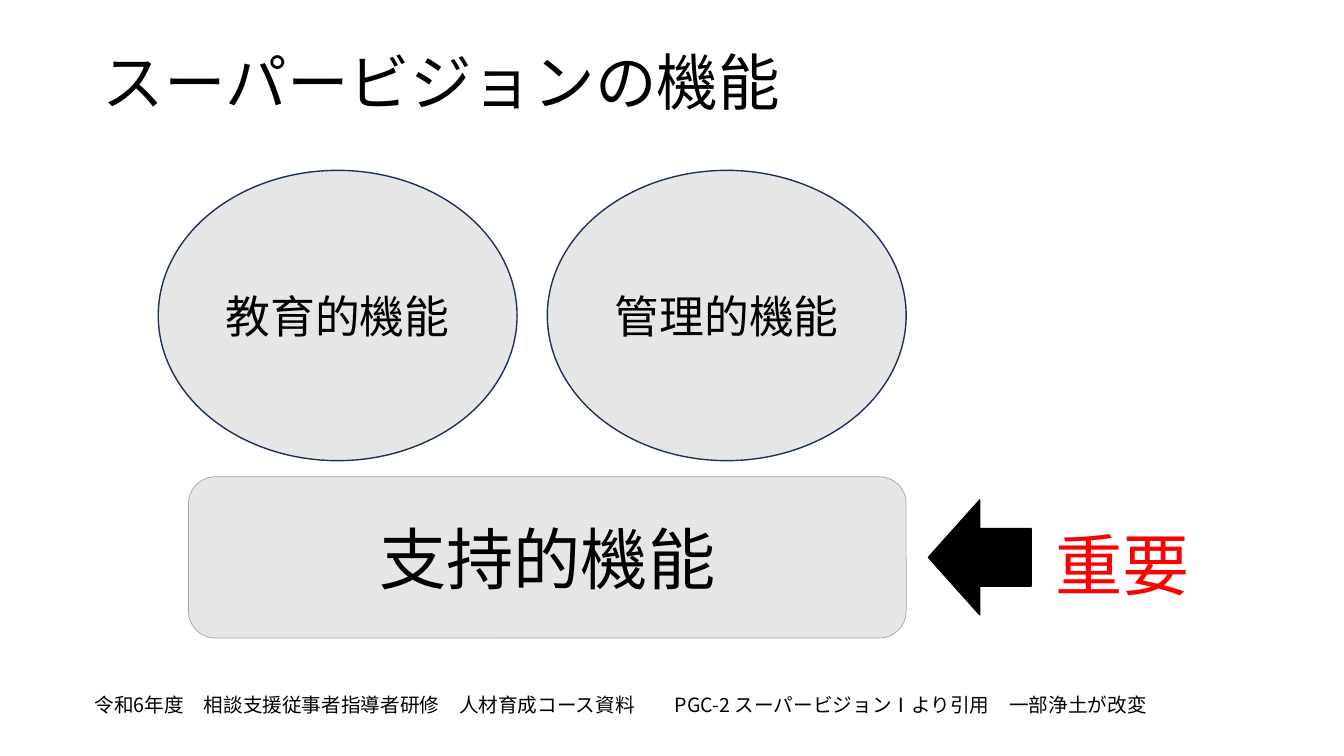
"""Build the slide on the three functions of supervision on a 40 by 30 grid."""
from dataclasses import dataclass

import lxml.etree
import pptx
import pptx.dml.color
import pptx.enum.shapes
import pptx.enum.text
import pptx.oxml.ns
import pptx.util


@dataclass(frozen=True)
class Theme:
    font: str = "Noto Sans CJK JP"
    black: str = "000000"
    red: str = "FF0000"
    panel: str = "E7E6E6"
    navy: str = "1E3256"
    gray: str = "A5A5A5"
    title: int = 44
    large: int = 48
    medium: int = 32
    small: int = 14


theme = Theme()
kinds = pptx.enum.shapes.MSO_SHAPE
anchors = pptx.enum.text.MSO_ANCHOR
aligns = pptx.enum.text.PP_ALIGN
rgb = pptx.dml.color.RGBColor.from_string

deck = pptx.Presentation()
deck.slide_width = pptx.util.Inches(13.33)
deck.slide_height = pptx.util.Inches(7.5)
column = deck.slide_width / 40
row = deck.slide_height / 30
page = deck.slides.add_slide(deck.slide_layouts[5])


def place(left, top, width, height):
    return [round(size) for size in
            (left * column, top * row, width * column, height * row)]


def write(box, words, size, color, align, anchor):
    frame = box.text_frame
    frame.word_wrap = True
    frame.auto_size = pptx.enum.text.MSO_AUTO_SIZE.NONE
    frame.vertical_anchor = anchor
    para = frame.paragraphs[0]
    para.text = words
    para.alignment = align
    para.font.size = pptx.util.Pt(size)
    para.font.color.rgb = rgb(color)
    para.font.name = theme.font
    for latin in frame._txBody.iter(pptx.oxml.ns.qn("a:latin")):
        east = lxml.etree.Element(pptx.oxml.ns.qn("a:ea"), typeface=theme.font)
        latin.addnext(east)
    return para


title = page.shapes.title
title.left, title.top, title.width, title.height = place(2.76, 1.6, 34.5, 3.6)
heading = write(title, "スーパービジョンの機能", theme.title, theme.black,
                aligns.LEFT, anchors.MIDDLE)
heading.line_spacing = 0.9

oval_left, oval_width, oval_step = 4.71, 10.68, 11.58
base_width = 2 * oval_width
base_left = oval_left + oval_step + oval_width - base_width

functions = [
    ("教育的機能", kinds.OVAL, (oval_left, 6.76, oval_width, 11.52),
     theme.medium, theme.panel, theme.navy, 1),
    ("管理的機能", kinds.OVAL, (oval_left + oval_step, 6.76, oval_width, 11.52),
     theme.medium, theme.panel, theme.navy, 1),
    ("支持的機能", kinds.ROUNDED_RECTANGLE, (base_left, 18.92, base_width, 6.4),
     theme.large, theme.panel, theme.gray, 0.5),
    ("", kinds.LEFT_ARROW, (27.63, 19.84, 3.06, 4.56),
     theme.large, theme.black, theme.black, 1),
]
for words, kind, area, size, fill, line, weight in functions:
    shape = page.shapes.add_shape(kind, *place(*area))
    shape.shadow.inherit = False
    shape.fill.solid()
    shape.fill.fore_color.rgb = rgb(fill)
    shape.line.color.rgb = rgb(line)
    shape.line.width = pptx.util.Pt(weight)
    if words:
        write(shape, words, size, theme.black, aligns.CENTER, anchors.MIDDLE)

source = ("令和6年度　相談支援従事者指導者研修　人材育成コース資料　　"
          "PGC-2 スーパービジョンⅠより引用　一部浄土が改変")
labels = [
    ("重要", (31.11, 20.56, 5.31, 3.64), theme.large, theme.red),
    (source, (2.52, 27.32, 33.57, 1.36), theme.small, theme.black),
]
for words, area, size, color in labels:
    box = page.shapes.add_textbox(*place(*area))
    write(box, words, size, color, aligns.LEFT, anchors.TOP)

deck.save("out.pptx")
